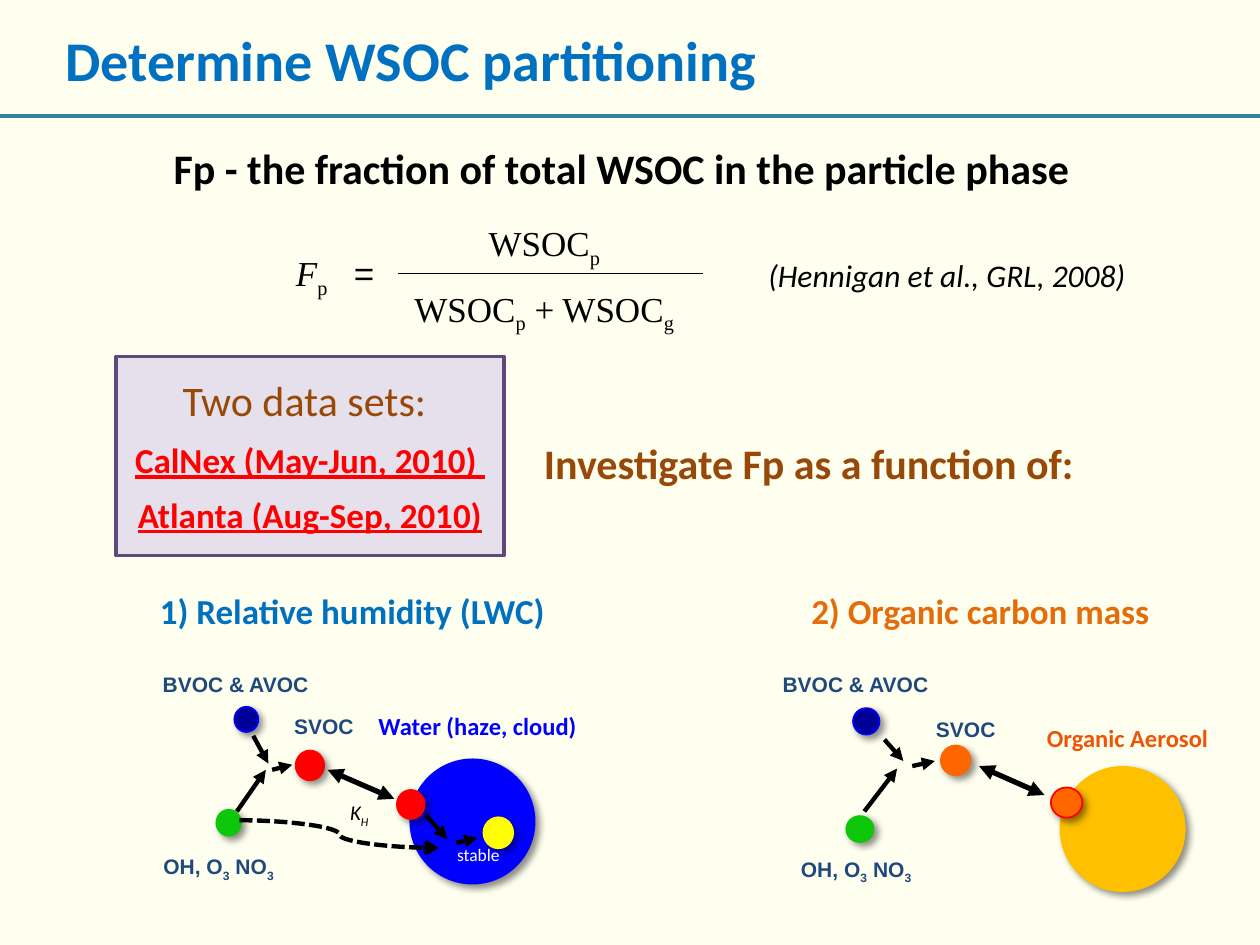
from lxml import etree
from pptx import Presentation
from pptx.dml.color import RGBColor
from pptx.enum import dml, shapes, text
from pptx.oxml.ns import qn
from pptx.util import Inches, Pt

COLORS = {
    "background": "FFFFF0", "black": "000000", "white": "FFFFFF",
    "title": "0070C0", "rule": "31859C", "brown": "984807",
    "panel": "E6E0EC", "panel_edge": "604A7B", "red": "FF0000",
    "label": "1F497D", "navy": "000099", "blue": "0000FF",
    "green": "0EC60A", "yellow": "FFFF00", "orange": "FF6600",
    "amber": "FFC000", "aerosol": "EF5406", "heading": "E46C0A",
}
LABEL = {"size": 12, "font": "Arial", "color": "label", "bold": True,
         "align": text.PP_ALIGN.CENTER, "anchor": text.MSO_ANCHOR.MIDDLE}
MATH = {"size": 20, "font": "Times New Roman"}


def rgb(name):
    return RGBColor.from_string(COLORS[name])


def inches(values):
    return [Inches(v) for v in values]


def sub(parent, tag, **attrs):
    return etree.SubElement(parent, qn(tag), attrs)


def add_text(parent, box, lines, size, color="black", font="Calibri", align=None,
             anchor=text.MSO_ANCHOR.TOP, wrap=True, grow=True, spacing=None, tab=None,
             **style):
    """Add a text box; pieces between bars in a line alternate normal and subscript."""
    tf = parent.add_textbox(*inches(box)).text_frame
    tf.word_wrap = wrap
    tf.vertical_anchor = anchor
    if grow:
        tf.auto_size = text.MSO_AUTO_SIZE.SHAPE_TO_FIT_TEXT
    for i, line in enumerate(lines.split("\n")):
        p = tf.paragraphs[0] if i == 0 else tf.add_paragraph()
        p.alignment = align
        p.line_spacing = spacing
        if tab:
            tabs = sub(p._p.get_or_add_pPr(), "a:tabLst")
            sub(tabs, "a:tab", pos=str(Inches(tab)), algn="l")
        for j, piece in enumerate(line.split("|")):
            r = p.add_run()
            r.text = piece
            for name, value in {"size": Pt(size), "name": font, **style}.items():
                setattr(r.font, name, value)
            r.font.color.rgb = rgb(color)
            if j % 2:
                r._r.get_or_add_rPr().set("baseline", "-25000")
    return tf.paragraphs[0]


def add_line(parent, start, end, color="black", width=2.5, head=None, tail=None,
             kind=shapes.MSO_CONNECTOR.STRAIGHT, dash=None):
    s = parent.add_connector(kind, *inches(start + end))
    s.line.color.rgb = rgb(color)
    s.line.width = Pt(width)
    if dash:
        s.line.dash_style = dash
    ln = s.line._get_or_add_ln()
    for tag, arrow in (("a:headEnd", head), ("a:tailEnd", tail)):
        if arrow:
            sub(ln, tag, type=arrow)
    sub(s._element.spPr, "a:effectLst")


def add_shape(parent, kind, box, fill, edge=None, width=1):
    s = parent.add_shape(kind, *inches(box))
    s.shadow.inherit = False
    s.fill.solid()
    s.fill.fore_color.rgb = rgb(fill)
    if edge:
        s.line.color.rgb = rgb(edge)
        s.line.width = Pt(width)
    else:
        s.line.fill.background()
    return s


def add_ball(parent, box, fill, edge=None):
    """Add a circle with a soft shadow towards the lower right."""
    s = add_shape(parent, shapes.MSO_SHAPE.OVAL, box, fill, edge)
    shadow = sub(s._element.spPr.find(qn("a:effectLst")), "a:outerShdw",
                 blurRad=str(Pt(4)), dist=str(Pt(3)), dir="2700000",
                 algn="tl", rotWithShape="0")
    color = sub(shadow, "a:srgbClr", val=COLORS["black"])
    sub(color, "a:alpha", val="43000")


def add_diagram(slide, balls, arrows, exchange, labels):
    """Group one partitioning sketch and return its shapes."""
    group = slide.shapes.add_group_shape().shapes
    for ball in balls:
        add_ball(group, *ball)
    for start, end in arrows:
        add_line(group, start, end, tail="triangle")
    add_line(group, *exchange, width=3, head="triangle", tail="triangle")
    for words, box in zip(("BVOC & AVOC", "SVOC", "OH, O|3| NO|3"), labels):
        add_text(group, box, words, **LABEL)
    return group


def add_equation(slide):
    group = slide.shapes.add_group_shape().shapes
    p = add_text(group, (2.25, 1.95, 1.29, 0.44), "F|p|\t=", tab=0.46, **MATH)
    p.runs[0].font.italic = True
    p.runs[2].font.name = "Arial"
    add_text(group, (3.78, 1.71, 1.17, 0.44), "WSOC|p", **MATH)
    add_text(group, (3.19, 2.23, 2.37, 0.44), "WSOC|p| + WSOC|g", **MATH)
    add_line(group, (3.16, 2.17), (5.58, 2.17), width=0.75)


def add_water_diagram(slide):
    group = add_diagram(
        slide,
        balls=[((1.86, 5.61, 0.19, 0.2), "navy", "blue"),
               ((1.71, 6.42, 0.21, 0.22), "green"),
               ((3.25, 6.02, 1, 1), "blue"),
               ((3.83, 6.48, 0.25, 0.26), "yellow"),
               ((2.34, 5.95, 0.24, 0.25), "red"),
               ((3.15, 6.27, 0.22, 0.23), "red", "red")],
        arrows=[((2.01, 5.84), (2.13, 6.06)), ((1.88, 6.44), (2.11, 6.11)),
                ((2.16, 6.11), (2.32, 6.07)), ((3.38, 6.47), (3.55, 6.66)),
                ((3.62, 6.69), (3.79, 6.65))],
        exchange=((3.13, 6.34), (2.6, 6.11)),
        labels=[(0.92, 5.28, 1.9, 0.3), (2.18, 5.61, 0.78, 0.3),
                (1.03, 6.74, 1.41, 0.3)])
    add_line(group, (1.9, 6.51), (3.48, 6.73), tail="arrow",
             kind=shapes.MSO_CONNECTOR.CURVE, dash=dml.MSO_LINE.SQUARE_DOT)
    add_text(group, (2.9, 5.59, 1.78, 0.34), "Water (haze, cloud)", 14, "blue",
             bold=True, align=text.PP_ALIGN.CENTER)
    add_text(group, (3.53, 6.65, 0.63, 0.31), "stable", 10, "white")
    add_text(group, (2.68, 6.3, 0.44, 0.3), "K|H", 12, italic=True)


def add_aerosol_diagram(slide):
    group = add_diagram(
        slide,
        balls=[((6.77, 5.62, 0.21, 0.21), "navy", "blue"),
               ((6.71, 6.47, 0.23, 0.22), "green"),
               ((7.46, 5.91, 0.25, 0.25), "orange"),
               ((8.41, 6.08, 1, 1), "amber"),
               ((8.34, 6.25, 0.25, 0.24), "orange", "red")],
        arrows=[((7.02, 5.87), (7.17, 6.04)), ((6.86, 6.44), (7.12, 6.1)),
                ((7.24, 6.08), (7.42, 6.04))],
        exchange=((8.29, 6.31), (7.77, 6.08)),
        labels=[(5.84, 5.28, 1.9, 0.3), (7.28, 5.64, 0.77, 0.3),
                (6.09, 6.76, 1.41, 0.3)])
    add_text(group, (8.21, 5.69, 1.5, 0.34), "Organic Aerosol", 14, "aerosol", bold=True)


def add_data_sets(slide):
    add_shape(slide.shapes, shapes.MSO_SHAPE.RECTANGLE, (0.92, 2.83, 3.08, 1.58),
              "panel", "panel_edge", 2)
    add_text(slide.shapes, (1.35, 2.92, 2.21, 0.5), "Two data sets:", 24, "brown",
             wrap=False)
    add_text(slide.shapes, (0.92, 3.33, 3.08, 0.98),
             "CalNex (May-Jun, 2010) \nAtlanta (Aug-Sep, 2010)", 20, "red",
             bold=True, underline=True, spacing=1.3, align=text.PP_ALIGN.CENTER)


def main():
    prs = Presentation()
    prs.slide_width, prs.slide_height = Inches(10), Inches(7.5)
    slide = prs.slides.add_slide(prs.slide_layouts[6])
    slide.background.fill.solid()
    slide.background.fill.fore_color.rgb = rgb("background")

    add_text(slide.shapes, (0.42, 0.15, 9, 0.78), "Determine WSOC partitioning", 32,
             "title", bold=True, grow=False)
    add_line(slide.shapes, (0, 0.92), (10, 0.92), "rule", 2.25)
    add_text(slide.shapes, (1.28, 1.08, 7.46, 0.5),
             "Fp - the fraction of total WSOC in the particle phase", 24,
             bold=True, wrap=False)
    add_equation(slide)
    add_text(slide.shapes, (6, 1.98, 3.07, 0.4), "(Hennigan et al., GRL, 2008)", 18,
             italic=True, wrap=False)
    add_data_sets(slide)
    add_text(slide.shapes, (4.17, 3.42, 4.5, 0.5), "Investigate Fp as a function of:",
             24, "brown", bold=True, align=text.PP_ALIGN.CENTER)
    add_text(slide.shapes, (1.17, 4.63, 3.28, 0.44), "1) Relative humidity (LWC)", 20,
             "title", bold=True, wrap=False)
    add_text(slide.shapes, (6.34, 4.63, 2.91, 0.44), "2) Organic carbon mass", 20,
             "heading", bold=True, wrap=False)
    add_water_diagram(slide)
    add_aerosol_diagram(slide)
    prs.save("out.pptx")


if __name__ == "__main__":
    main()
